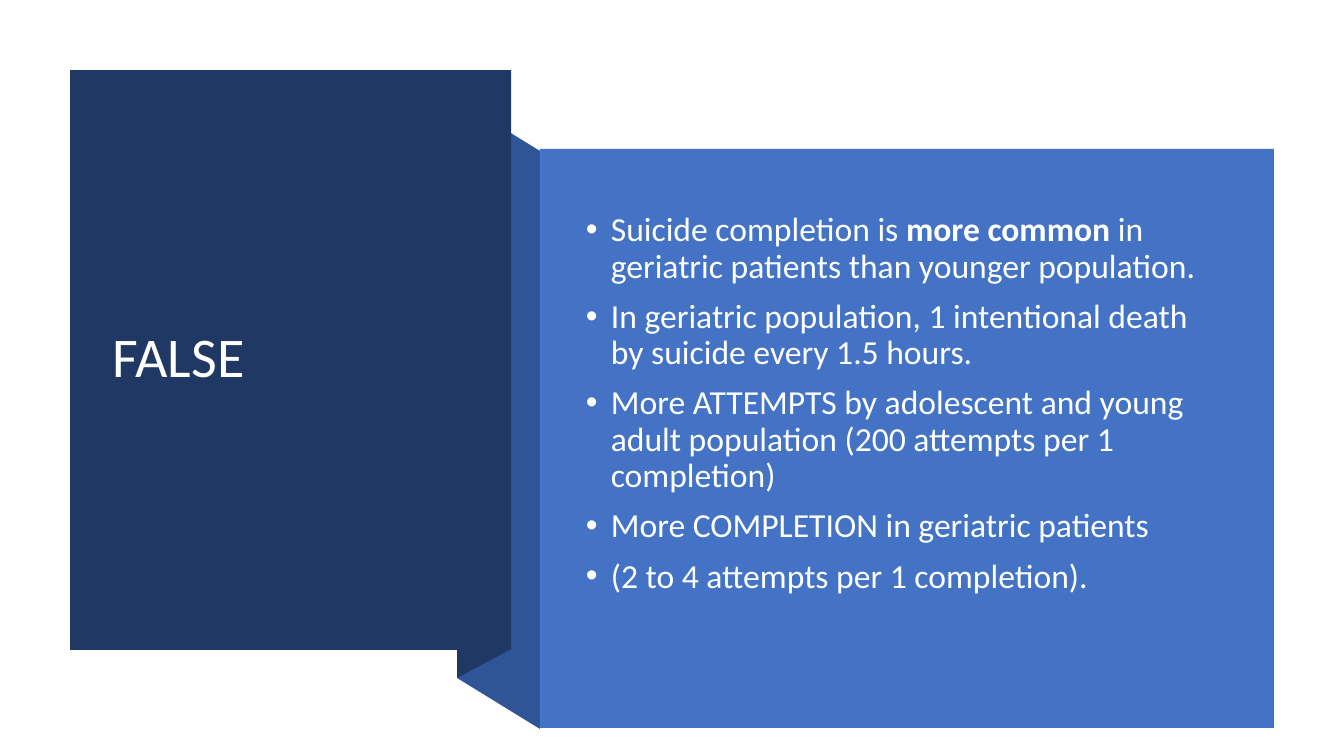
from lxml import etree
from pptx import Presentation
from pptx.dml.color import RGBColor
from pptx.enum.shapes import MSO_SHAPE
from pptx.enum.text import MSO_ANCHOR, PP_ALIGN
from pptx.oxml.ns import qn
from pptx.util import Pt

RECTANGLE = MSO_SHAPE.RECTANGLE
MIDDLE = MSO_ANCHOR.MIDDLE
LEFT = PP_ALIGN.LEFT

PAGE_WIDTH, PAGE_HEIGHT = 1344, 756
EMU_PER_PX = 12192000 / PAGE_WIDTH

NAVY, FOLD_BLUE, PANEL_BLUE = "203864", "2F5597", "4472C4"
WHITE, OFF_WHITE = "FFFFFF", "FEFFFF"

FACTS = [
    [("Suicide completion is ", False), ("more common", True),
     (" in geriatric patients than younger population.", False)],
    [("In geriatric population, 1 intentional death by suicide every 1.5 hours.", False)],
    [("More ATTEMPTS by adolescent and young adult population "
      "(200 attempts per 1 completion)", False)],
    [("More COMPLETION in geriatric patients", False)],
    [("(2 to 4 attempts per 1 completion).", False)],
]


def px(length):
    return round(length * EMU_PER_PX)


def color(value):
    return RGBColor.from_string(value)


def add_span(para, text, *, font, size, ink, bold=False):
    span = para.add_run()
    span.text = text
    span.font.name = font
    span.font.size = Pt(size)
    span.font.bold = bold
    span.font.color.rgb = color(ink)


def add_bullet(para, indent):
    properties = para._p.get_or_add_pPr()
    properties.set("marL", str(px(indent)))
    properties.set("indent", str(-px(indent)))
    etree.SubElement(properties, qn("a:buFont")).set("typeface", "Arial")
    etree.SubElement(properties, qn("a:buChar")).set("char", "•")


class SlideBuilder:
    """Holds the text style and the current page."""

    def __init__(self, page, font="Calibri", line_spacing=0.9):
        self.page = page
        self.font = font
        self.line_spacing = line_spacing

    def paint(self, shape, fill):
        shape.shadow.inherit = False
        shape.fill.solid()
        shape.fill.fore_color.rgb = color(fill)
        shape.line.fill.background()

    def polygon(self, points, fill):
        outline = self.page.shapes.build_freeform(*points[0], scale=EMU_PER_PX)
        outline.add_line_segments(points[1:], close=True)
        self.paint(outline.convert_to_shape(), fill)

    def rectangle(self, left, top, width, height, fill):
        shape = self.page.shapes.add_shape(
            RECTANGLE, px(left), px(top), px(width), px(height))
        self.paint(shape, fill)

    def text(self, left, top, width, height, paragraphs, *, size, ink,
             space_before=0, bullet_indent=0):
        box = self.page.shapes.add_textbox(px(left), px(top), px(width), px(height))
        frame = box.text_frame
        frame.word_wrap = True
        frame.vertical_anchor = MIDDLE
        for index, spans in enumerate(paragraphs):
            para = frame.add_paragraph() if index else frame.paragraphs[0]
            para.alignment = LEFT
            para.line_spacing = self.line_spacing
            para.space_before = Pt(space_before)
            if bullet_indent:
                add_bullet(para, bullet_indent)
            for text, bold in spans:
                add_span(para, text, font=self.font, size=size, ink=ink, bold=bold)


def main():
    deck = Presentation()
    deck.slide_width, deck.slide_height = px(PAGE_WIDTH), px(PAGE_HEIGHT)
    builder = SlideBuilder(deck.slides.add_slide(deck.slide_layouts[6]))

    # Folded ribbon joining the two panels
    builder.polygon([(540, 729), (457, 678), (457, 100), (540, 151)], FOLD_BLUE)
    builder.polygon([(511, 649), (457, 678), (457, 99), (511, 70)], NAVY)

    # Title panel
    builder.rectangle(70, 70, 441, 580, NAVY)
    builder.text(103, 108, 374, 503, [[("FALSE", False)]], size=40, ink=WHITE)

    # Facts panel
    builder.rectangle(540, 149, 734, 579, PANEL_BLUE)
    builder.text(576, 190, 656, 428, FACTS, size=24, ink=OFF_WHITE,
                 space_before=10, bullet_indent=25)

    deck.save("out.pptx")


if __name__ == "__main__":
    main()
